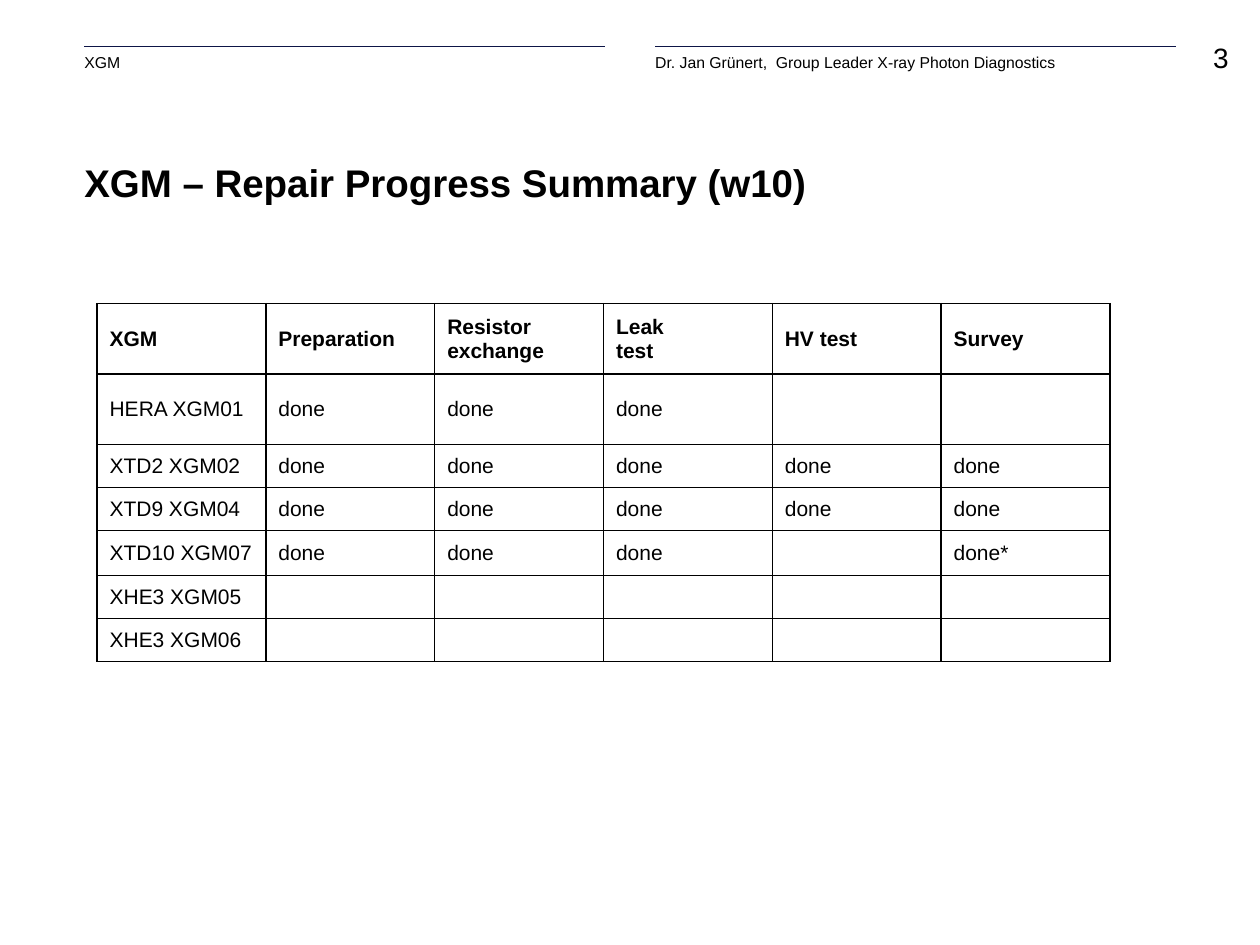
from lxml import etree
from pptx import Presentation
from pptx.dml.color import RGBColor
from pptx.enum.shapes import MSO_CONNECTOR
from pptx.enum.text import MSO_ANCHOR, PP_ALIGN
from pptx.oxml.ns import qn
from pptx.util import Inches, Pt

STRAIGHT = MSO_CONNECTOR.STRAIGHT
TOP, MIDDLE, BOTTOM = MSO_ANCHOR.TOP, MSO_ANCHOR.MIDDLE, MSO_ANCHOR.BOTTOM
LEFT, RIGHT = PP_ALIGN.LEFT, PP_ALIGN.RIGHT
FONT, BLACK, NAVY = "Arial", "000000", "0D1546"

# Content
TITLE = "XGM – Repair Progress Summary (w10)"
PAGE_NUMBER = "3"
HEADERS = [  # left edge, text
    (0.67, "XGM"),
    (5.2, "Dr. Jan Grünert,  Group Leader X-ray Photon Diagnostics"),
]
HEADER_WIDTH = 4.13
PROGRESS = [
    ["XGM", "Preparation", "Resistor exchange", "Leak\ntest", "HV test", "Survey"],
    ["HERA XGM01", "done", "done", "done", "", ""],
    ["XTD2 XGM02", "done", "done", "done", "done", "done"],
    ["XTD9 XGM04", "done", "done", "done", "done", "done"],
    ["XTD10 XGM07", "done", "done", "done", "", "done*"],
    ["XHE3 XGM05", "", "", "", "", ""],
    ["XHE3 XGM06", "", "", "", "", ""],
]
ROW_HEIGHTS = [0.56, 0.56, 0.34, 0.34, 0.36, 0.34, 0.34]
COLUMN_WIDTH = 1.34
CELL_SIZE = 12


def color(hex_value):
    return RGBColor.from_string(hex_value)


def add_run(paragraph, text, size, bold=False):
    run = paragraph.add_run()
    run.text = text
    run.font.name, run.font.size, run.font.bold = FONT, Pt(size), bold
    run.font.color.rgb = color(BLACK)


def add_text(slide, box, text, size, bold=False, align=LEFT, anchor=TOP):
    frame = slide.shapes.add_textbox(*map(Inches, box)).text_frame
    frame.word_wrap = True
    frame.vertical_anchor = anchor
    frame.margin_left = frame.margin_right = frame.margin_top = frame.margin_bottom = 0
    frame.paragraphs[0].alignment = align
    add_run(frame.paragraphs[0], text, size, bold)


def add_rule(slide, left, top, width):
    ends = (left, top, left + width, top)
    line = slide.shapes.add_connector(STRAIGHT, *map(Inches, ends))
    line.line.color.rgb = color(NAVY)
    line.line.width = Pt(0.5)
    etree.SubElement(line._element.spPr, qn("a:effectLst"))


def set_borders(cell):
    properties = cell._tc.get_or_add_tcPr()
    for index, side in enumerate(("lnL", "lnR", "lnT", "lnB")):
        border = etree.Element(qn(f"a:{side}"), w=str(Pt(1)))
        fill = etree.SubElement(border, qn("a:solidFill"))
        etree.SubElement(fill, qn("a:srgbClr"), val=BLACK)
        properties.insert(index, border)


def fill_cell(cell, text, bold):
    cell.vertical_anchor = MIDDLE
    cell.fill.background()
    set_borders(cell)
    paragraph = cell.text_frame.paragraphs[0]
    size = str(CELL_SIZE * 100)
    for index, part in enumerate(text.split("\n") if text else []):
        if index:
            paragraph.add_line_break()
            etree.SubElement(paragraph._p[-1], qn("a:rPr"), sz=size)
        add_run(paragraph, part, CELL_SIZE, bold)
    # Keeps empty cells from stretching their row
    etree.SubElement(paragraph._p, qn("a:endParaRPr"), sz=size)


def add_progress_table(slide, left, top):
    columns = len(PROGRESS[0])
    table = slide.shapes.add_table(
        len(PROGRESS), columns, Inches(left), Inches(top),
        Inches(COLUMN_WIDTH * columns), Inches(sum(ROW_HEIGHTS))).table
    table.horz_banding = False
    for column in table.columns:
        column.width = Inches(COLUMN_WIDTH)
    for row_index, (row, height) in enumerate(zip(PROGRESS, ROW_HEIGHTS)):
        table.rows[row_index].height = Inches(height)
        for column_index, text in enumerate(row):
            fill_cell(table.cell(row_index, column_index), text, row_index == 0)


def main():
    presentation = Presentation()
    presentation.slide_width, presentation.slide_height = Inches(10), Inches(7.5)
    slide = presentation.slides.add_slide(presentation.slide_layouts[6])

    # Page header
    add_text(slide, (9.33, 0.32, 0.42, 0.32), PAGE_NUMBER, 16, align=RIGHT)
    for left, text in HEADERS:
        add_rule(slide, left, 0.37, HEADER_WIDTH)
        add_text(slide, (left, 0.42, HEADER_WIDTH, 0.24), text, 9)

    # Title and table
    add_text(slide, (0.67, 0.78, 8.66, 0.85), TITLE, 22, bold=True, anchor=BOTTOM)
    add_progress_table(slide, 0.77, 2.41)
    presentation.save("out.pptx")


if __name__ == "__main__":
    main()
